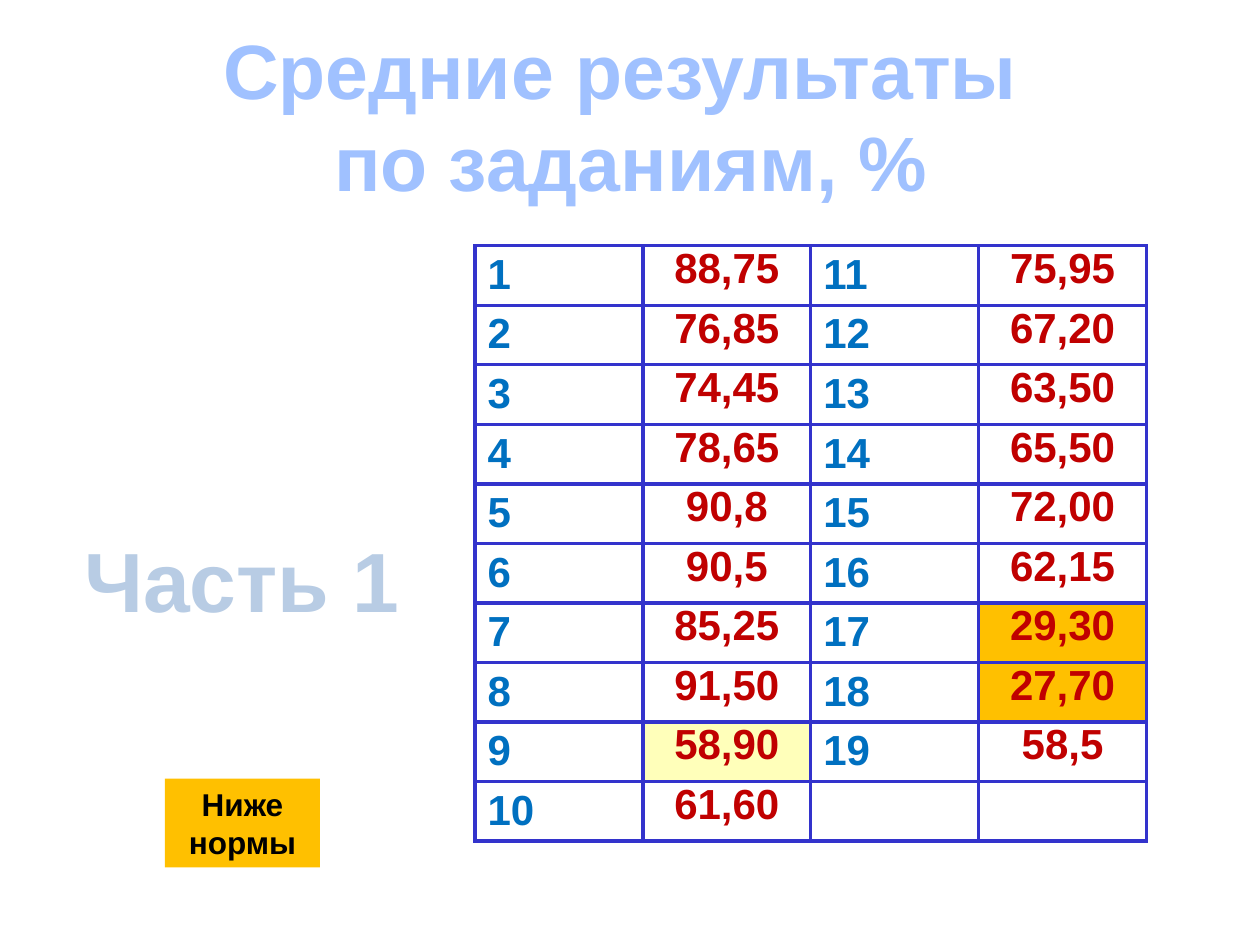
from lxml import etree
from pptx import Presentation
from pptx import util as u
from pptx.dml.color import RGBColor
from pptx.enum import shapes, text
from pptx.oxml import ns

# Content
TITLE = ["Средние результаты ", "по заданиям, %"]
PART = "Часть 1"
LEGEND = "Ниже нормы"
RESULTS = ["88,75", "76,85", "74,45", "78,65", "90,8", "90,5", "85,25",
           "91,50", "58,90", "61,60", "75,95", "67,20", "63,50", "65,50",
           "72,00", "62,15", "29,30", "27,70", "58,5"]
HIGHLIGHTS = {9: "borderline", 17: "below", 18: "below"}

COLORS = {"title": "A0C1FF", "part": "B8CCE4", "task": "0070C0",
          "result": "C00000", "border": "3333CC", "below": "FFC000",
          "borderline": "FFFFBA", "plain": "FFFFFF", "legend": "000000"}
FONT = "Arial"
WIDTH, HEIGHT = 10, 7.5
ROWS, PAIRS = 10, 2
MIDDLE, TOP = text.MSO_ANCHOR.MIDDLE, text.MSO_ANCHOR.TOP
CENTER, LEFT = text.PP_ALIGN.CENTER, text.PP_ALIGN.LEFT


def rgb(name):
    return RGBColor.from_string(COLORS[name])


def place(left, top, width, height):
    """Turn lengths in hundredths of the slide into inches."""
    return [u.Inches(share * side / 100) for share, side in
            zip((left, top, width, height), (WIDTH, HEIGHT) * 2)]


def write(frame, lines, size, color, align=CENTER, spacing=None):
    for index, line in enumerate(lines):
        para = frame.add_paragraph() if index else frame.paragraphs[0]
        para.alignment = align
        para.line_spacing = spacing
        span = para.add_run()
        span.text = line
        span.font.color.rgb = rgb(color)
        for key, value in {"name": FONT, "size": u.Pt(size), "bold": True}.items():
            setattr(span.font, key, value)


def fill_cell(cell, color):
    """Draw the four borders, then the fill."""
    props = cell._tc.get_or_add_tcPr()
    for side in ("lnL", "lnR", "lnT", "lnB"):
        line = etree.SubElement(props, ns.qn(f"a:{side}"), w=str(u.Pt(2.25)))
        solid = etree.SubElement(line, ns.qn("a:solidFill"))
        etree.SubElement(solid, ns.qn("a:srgbClr"), val=COLORS["border"])
    cell.fill.solid()
    cell.fill.fore_color.rgb = rgb(color)


deck = Presentation()
deck.slide_width, deck.slide_height = u.Inches(WIDTH), u.Inches(HEIGHT)
page = deck.slides.add_slide(deck.slide_layouts[6])

# Results table: task number and result, in two pairs of columns
area = place(37.7, 26, 53.3, 63)
grid = page.shapes.add_table(ROWS, 2 * PAIRS, *area).table
FORMATS = [
    {"vertical_anchor": MIDDLE, "margin_top": u.Inches(0.03),
     "margin_bottom": u.Inches(0.04)},
    {"vertical_anchor": TOP, "margin_left": u.Inches(0.07),
     "margin_right": u.Inches(0.07), "margin_top": 0, "margin_bottom": 0},
]
for index in range(ROWS * PAIRS):
    pair, row = divmod(index, ROWS)
    task = index + 1
    fills = ["plain", HIGHLIGHTS.get(task, "plain")]
    for side in range(2):
        cell = grid.cell(row, 2 * pair + side)
        for key, value in FORMATS[side].items():
            setattr(cell, key, value)
        fill_cell(cell, fills[side])
        if index < len(RESULTS):
            words = (str(task), RESULTS[index])[side]
            write(cell.text_frame, [words], 24, ("task", "result")[side],
                  (LEFT, CENTER)[side])

# Title and part name
for lines, area, size, color, spacing in [
    (TITLE, (3.1, 1.6, 94, 21), 44, "title", u.Pt(53)),
    ([PART], (4.2, 55.3, 30, 12), 48, "part", None),
]:
    box = page.shapes.add_textbox(*place(*area))
    box.text_frame.word_wrap = True
    box.text_frame.vertical_anchor = MIDDLE
    write(box.text_frame, lines, size, color, spacing=spacing)

# Legend
legend = page.shapes.add_shape(shapes.MSO_SHAPE.RECTANGLE,
                               *place(13.1, 82.4, 12.3, 9.4))
legend.shadow.inherit = False
legend.fill.solid()
legend.fill.fore_color.rgb = rgb("below")
legend.line.fill.background()
legend.text_frame.word_wrap = True
legend.text_frame.vertical_anchor = MIDDLE
write(legend.text_frame, [LEGEND], 18, "legend")

deck.save("out.pptx")
